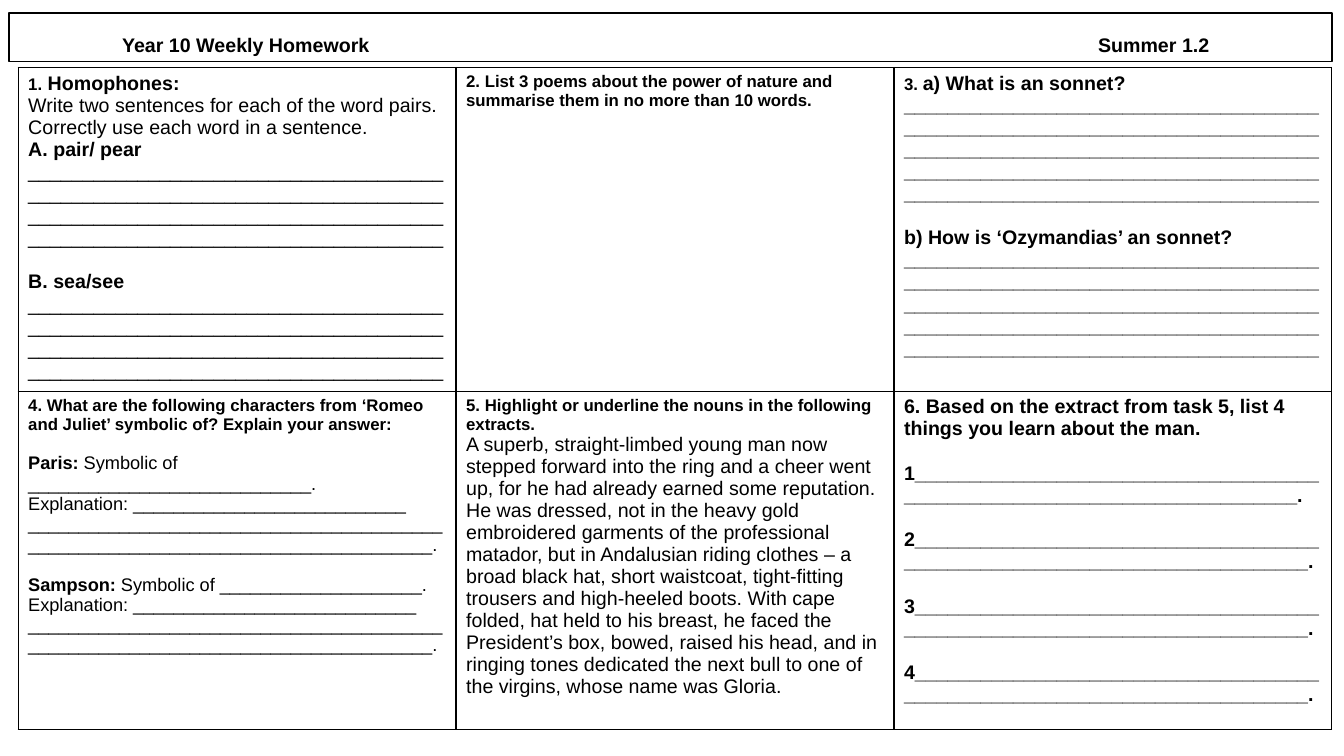
"""Weekly homework sheet: a title bar above a grid of six tasks."""
from lxml import etree
from pptx import Presentation, util as u
from pptx.dml.color import RGBColor
from pptx.enum import shapes, text
from pptx.oxml import ns

THEME = {"font": "Arial", "ink": RGBColor(0, 0, 0), "paper": RGBColor(255, 255, 255),
         "small": 12, "mid": 13, "big": 14, "line": 1}
SMALL, MID, BIG = THEME["small"], THEME["mid"], THEME["big"]
LINE = 38
TITLE = "Year 10 Weekly Homework\tSummer 1.2"
EXTRACT = (
    "A superb, straight-limbed young man now stepped forward into the ring and a cheer "
    "went up, for he had already earned some reputation. He was dressed, not in the heavy "
    "gold embroidered garments of the professional matador, but in Andalusian riding "
    "clothes – a broad black hat, short waistcoat, tight-fitting trousers and high-heeled "
    "boots. With cape folded, hat held to his breast, he faced the President’s box, bowed, "
    "raised his head, and in ringing tones dedicated the next bull to one of the virgins, "
    "whose name was Gloria.")


def para(*runs, gap=0):
    """Describe a paragraph: runs of (text, size, bold) and the space above."""
    return runs, gap


def rule(count, bold=False):
    """Describe full-width writing lines."""
    return para(("_" * LINE * count, BIG, bold))


def role(name, blank, more, gap):
    """Describe the answer space for one character."""
    return [para((name + ": ", MID, True), ("Symbolic of " + "_" * blank + ".", MID, False), gap=gap),
            para(("Explanation: " + "_" * more, MID, False)),
            para(("_" * 81 + ".", MID, False))]


TASKS = [
    [[para(("1.", SMALL, True), (" Homophones:", BIG, True)),
      para(("Write two sentences for each of the word pairs.", BIG, False)),
      para(("Correctly use each word in a sentence.", BIG, False)),
      para(("A. pair/ pear", BIG, True)), rule(4),
      para(("B. sea/see", BIG, True), gap=16), rule(4)],
     [para(("2. List 3 poems about the power of nature and summarise them "
            "in no more than 10 words.", SMALL, True))],
     [para(("3. ", SMALL, True), ("a) What is an sonnet?", BIG, True)), rule(5, True),
      para(("b) How is ‘Ozymandias’ an sonnet?", BIG, True), gap=16), rule(5, True)]],
    [[para(("4. What are the following characters from ‘Romeo and Juliet’ symbolic of? "
            "Explain your answer:", SMALL, True)),
      *role("Paris", 28, 27, 14), *role("Sampson", 20, 28, 14)],
     [para(("5. Highlight or underline the nouns in the following extracts.", SMALL, True)),
      para((EXTRACT, BIG, False))],
     [para(("6. Based on the extract from task 5, list 4 things you learn about the man.", BIG, True)),
      *[para((f"{n}{'_' * (73 if n == 1 else 74)}.", BIG, True), gap=16) for n in range(1, 5)]]],
]
BAR = (0.09, 0.13, 13.12, 0.48)
GRID = (0.18, 0.67, 13.03, 6.57)
ROWS = (3.21, 3.36)


def put(par, words, size=BIG, bold=False):
    """Add formatted text to a paragraph."""
    run = par.add_run()
    run.text = words
    font = run.font
    font.name, font.size, font.bold = THEME["font"], u.Pt(size), bold
    font.color.rgb = THEME["ink"]


def border(cell):
    """Rule all four sides of a cell."""
    props = cell._tc.get_or_add_tcPr()
    for i, side in enumerate("LRTB"):
        edge = etree.Element(ns.qn("a:ln" + side), w=str(u.Pt(THEME["line"])))
        fill = etree.SubElement(edge, ns.qn("a:solidFill"))
        etree.SubElement(fill, ns.qn("a:srgbClr"), val=str(THEME["ink"]))
        props.insert(i, edge)


def header(slide):
    """Draw the title bar."""
    bar = slide.shapes.add_shape(shapes.MSO_SHAPE.RECTANGLE, *map(u.Inches, BAR))
    bar.shadow.inherit = False
    bar.fill.solid()
    bar.fill.fore_color.rgb = THEME["paper"]
    bar.line.color.rgb = THEME["ink"]
    bar.line.width = u.Pt(THEME["line"])
    frame = bar.text_frame
    frame.word_wrap = True
    frame.vertical_anchor = text.MSO_ANCHOR.BOTTOM
    frame.margin_left = u.Inches(1.12)
    par = frame.paragraphs[0]
    par.alignment = text.PP_ALIGN.LEFT
    par.line_spacing = 0.9
    tabs = etree.SubElement(par._p.get_or_add_pPr(), ns.qn("a:tabLst"))
    etree.SubElement(tabs, ns.qn("a:tab"), pos=str(u.Inches(9.68)), algn="l")
    put(par, TITLE, bold=True)


def grid(slide):
    """Draw the task table."""
    table = slide.shapes.add_table(len(TASKS), len(TASKS[0]), *map(u.Inches, GRID)).table
    table.first_row = table.horz_banding = False
    for r, row in enumerate(TASKS):
        table.rows[r].height = u.Inches(ROWS[r])
        for c, task in enumerate(row):
            cell = table.cell(r, c)
            cell.fill.background()
            border(cell)
            frame = cell.text_frame
            for i, (runs, gap) in enumerate(task):
                par = frame.add_paragraph() if i else frame.paragraphs[0]
                par.space_before = u.Pt(gap)
                for words, size, bold in runs:
                    put(par, words, size=size, bold=bold)


def main():
    """Build and save the sheet."""
    deck = Presentation()
    deck.slide_width, deck.slide_height = u.Inches(13.33), u.Inches(7.5)
    slide = deck.slides.add_slide(deck.slide_layouts[6])
    grid(slide)
    header(slide)
    deck.save("out.pptx")


if __name__ == "__main__":
    main()
